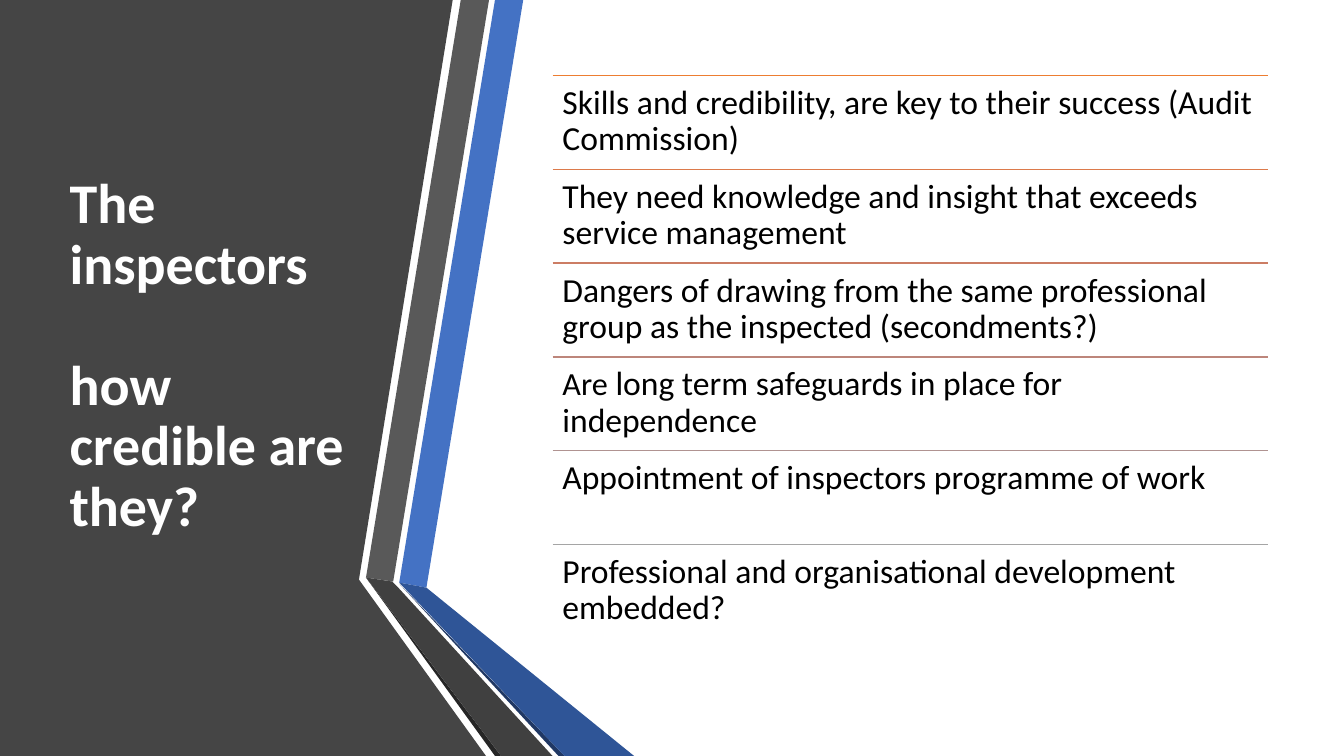
from dataclasses import dataclass

from lxml import etree
from pptx import Presentation
from pptx import util as u
from pptx.dml.color import RGBColor
from pptx.enum import shapes, text
from pptx.oxml import ns


@dataclass(frozen=True)
class Theme:
    font: str = "Calibri"
    title_size: int = 40
    body_size: int = 24
    small_size: int = 23
    title_gap: int = 43
    leading: float = 0.9
    light: str = "FFFFFF"
    ink: str = "000000"
    panel: str = "454545"
    blue: str = "4472C4"
    blue_dark: str = "2F5597"
    blue_edge: str = "203864"
    grey: str = "595959"
    grey_dark: str = "404040"
    grey_edge: str = "262626"
    rules: tuple = ("ED7D31", "DC7A4B", "CC7D64", "BD867B", "B09391", "A5A5A5")


class Slide:
    def __init__(self, page, theme):
        self.page = page
        self.theme = theme

    def style(self, para, size, color, bold=False):
        para.alignment = text.PP_ALIGN.LEFT
        para.line_spacing = self.theme.leading
        para.font.name = self.theme.font
        para.font.size = u.Pt(size)
        para.font.bold = bold
        para.font.color.rgb = RGBColor.from_string(color)

    def polygon(self, color, *points):
        corners = [(u.Inches(x), u.Inches(y)) for x, y in points]
        builder = self.page.shapes.build_freeform(*corners[0])
        builder.add_line_segments(corners[1:], close=True)
        shape = builder.convert_to_shape()
        shape.shadow.inherit = False
        shape.fill.solid()
        shape.fill.fore_color.rgb = RGBColor.from_string(color)
        shape.line.fill.background()

    def title(self, lines, left, top, width, height):
        box = self.page.shapes.title
        box.left, box.top = u.Inches(left), u.Inches(top)
        box.width, box.height = u.Inches(width), u.Inches(height)
        self.page.shapes._spTree.append(box._element)
        frame = box.text_frame
        frame.word_wrap = True
        frame.auto_size = text.MSO_AUTO_SIZE.NONE
        frame.vertical_anchor = text.MSO_ANCHOR.MIDDLE
        frame.text = "\n".join(lines)
        for para in frame.paragraphs:
            self.style(para, self.theme.title_size, self.theme.light, bold=True)
        for para in frame.paragraphs[1:]:
            para.space_before = u.Pt(self.theme.title_gap)

    def rule(self, color, left, top, width):
        line = self.page.shapes.add_connector(
            shapes.MSO_CONNECTOR.STRAIGHT,
            u.Inches(left), u.Inches(top), u.Inches(left + width), u.Inches(top))
        line.line.color.rgb = RGBColor.from_string(color)
        line.line.width = u.Pt(1)
        etree.SubElement(line._element.spPr, ns.qn("a:effectLst"))

    def item(self, spans, left, top, width, height):
        box = self.page.shapes.add_textbox(
            u.Inches(left), u.Inches(top), u.Inches(width), u.Inches(height))
        frame = box.text_frame
        frame.word_wrap = True
        frame.margin_left = frame.margin_right = u.Inches(0.1)
        frame.margin_top = frame.margin_bottom = u.Inches(0.1)
        para = frame.paragraphs[0]
        self.style(para, self.theme.body_size, self.theme.ink)
        for wording, size in spans:
            span = para.add_run()
            span.text = wording
            if size != self.theme.body_size:
                span.font.size = u.Pt(size)


def main():
    theme = Theme()
    deck = Presentation()
    deck.slide_width, deck.slide_height = u.Inches(13.33), u.Inches(7.5)
    slide = Slide(deck.slides.add_slide(deck.slide_layouts[5]), theme)

    slide.polygon(theme.panel, (0, 0), (4.49, 0), (3.56, 5.75), (4.82, 7.5), (0, 7.5))
    slide.polygon(theme.blue, (3.96, 5.78), (4.23, 5.83), (5.19, 0), (4.91, 0))
    slide.polygon(theme.grey, (3.63, 5.73), (3.9, 5.77), (4.85, 0), (4.57, 0))
    slide.polygon(theme.grey_edge, (3.63, 5.73), (4.91, 7.5), (4.97, 7.5))
    slide.polygon(theme.blue_edge, (3.96, 5.79), (5.54, 7.5), (5.6, 7.5))
    slide.polygon(theme.blue_dark, (3.96, 5.78), (5.6, 7.5), (6.29, 7.5), (4.23, 5.83))
    slide.polygon(theme.grey_dark, (3.63, 5.73), (4.97, 7.5), (5.48, 7.5),
                  (3.95, 5.83), (3.89, 5.77))

    slide.title(["The inspectors", "how credible are they?"], 0.59, 0.75, 3.04, 5.58)

    body = theme.body_size
    items = [
        [("Skills and credibility, are key to their success (Audit Commission)", body)],
        [("They need knowledge and insight that exceeds service management", body)],
        [("Dangers of drawing from the same professional group as the inspected "
          "(secondments?)", body)],
        [("Are", theme.small_size),
         (" long term safeguards in place for independence", body)],
        [("Appointment of inspectors programme of work", body)],
        [("Professional and organisational development embedded?", body)],
    ]
    left, top, width, pitch = 5.48, 0.75, 7.1, 0.93
    for row, (spans, color) in enumerate(zip(items, theme.rules)):
        slide.rule(color, left, top + row * pitch, width)
        slide.item(spans, left, top + row * pitch, width, pitch)

    deck.save("out.pptx")


if __name__ == "__main__":
    main()
